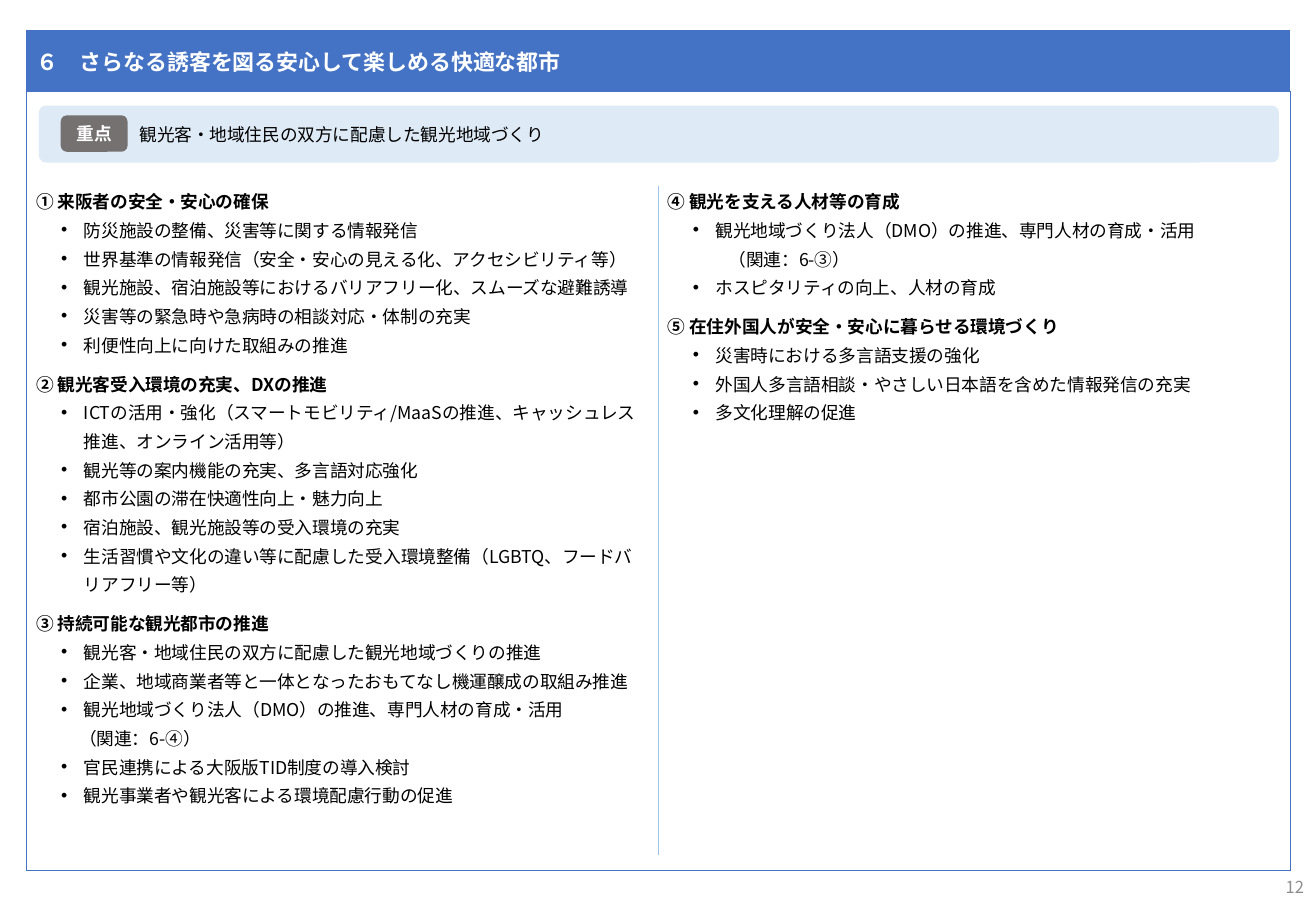
import pptx
import pptx.util
import pptx.dml.color
import pptx.enum.shapes
import pptx.enum.text
import pptx.oxml.ns
import lxml.etree

Pt = pptx.util.Pt
qn = pptx.oxml.ns.qn
SHAPES = pptx.enum.shapes.MSO_SHAPE
ALIGN = pptx.enum.text.PP_ALIGN
MIDDLE = pptx.enum.text.MSO_ANCHOR.MIDDLE
FONT = "Noto Sans CJK JP"
BLUE = "4472C4"


def color(value):
    return pptx.dml.color.RGBColor.from_string(value)


def write(frame, text, size=10.5, ink="000000", bold=False, align=ALIGN.LEFT,
          spacing=None, after=0, left=0, hanging=0):
    paragraph = frame.paragraphs[0]
    if paragraph.runs:
        paragraph = frame.add_paragraph()
    paragraph.alignment = align
    paragraph.space_after = Pt(after)
    if spacing:
        paragraph.line_spacing = Pt(spacing)
    properties = paragraph._p.get_or_add_pPr()
    properties.set("marL", str(Pt(left)))
    properties.set("indent", str(Pt(-hanging)))
    if hanging:
        lxml.etree.SubElement(properties, qn("a:buFont")).set("typeface", "Arial")
        lxml.etree.SubElement(properties, qn("a:buChar")).set("char", "•")
    run = paragraph.add_run()
    run.text = text
    run.font.size = Pt(size)
    run.font.bold = bold
    run.font.color.rgb = color(ink)
    run.font.name = FONT
    lxml.etree.SubElement(run._r.get_or_add_rPr(), qn("a:ea")).set("typeface", FONT)


left_sections = [
    ("① 来阪者の安全・安心の確保", [
        "防災施設の整備、災害等に関する情報発信",
        "世界基準の情報発信（安全・安心の見える化、アクセシビリティ等）",
        "観光施設、宿泊施設等におけるバリアフリー化、スムーズな避難誘導",
        "災害等の緊急時や急病時の相談対応・体制の充実",
        "利便性向上に向けた取組みの推進",
    ]),
    ("② 観光客受入環境の充実、DXの推進", [
        "ICTの活用・強化（スマートモビリティ/MaaSの推進、キャッシュレス推進、オンライン活用等）",
        "観光等の案内機能の充実、多言語対応強化",
        "都市公園の滞在快適性向上・魅力向上",
        "宿泊施設、観光施設等の受入環境の充実",
        "生活習慣や⽂化の違い等に配慮した受⼊環境整備（LGBTQ、フードバリアフリー等）",
    ]),
    ("③ 持続可能な観光都市の推進", [
        "観光客・地域住民の双方に配慮した観光地域づくりの推進",
        "企業、地域商業者等と一体となったおもてなし機運醸成の取組み推進",
        "観光地域づくり法人（DMO）の推進、専門人材の育成・活用",
        "（関連：6-④）",
        "官民連携による大阪版TID制度の導入検討",
        "観光事業者や観光客による環境配慮行動の促進",
    ]),
]
right_sections = [
    ("④ 観光を支える人材等の育成", [
        "観光地域づくり法⼈（DMO）の推進、専⾨⼈材の育成・活用",
        "（関連：6-③）",
        "ホスピタリティの向上、人材の育成",
    ]),
    ("⑤ 在住外国⼈が安全・安⼼に暮らせる環境づくり", [
        "災害時における多⾔語⽀援の強化",
        "外国⼈多⾔語相談・やさしい⽇本語を含めた情報発信の充実",
        "多文化理解の促進",
    ]),
]

presentation = pptx.Presentation()
presentation.slide_width = Pt(780)
presentation.slide_height = Pt(540)
slide = presentation.slides.add_slide(presentation.slide_layouts[6])

table = slide.shapes.add_table(2, 2, Pt(15.84), Pt(18), Pt(748.8), Pt(498.2)).table
table.first_row = False
table.horz_banding = False
table.rows[0].height = Pt(36)
table.rows[1].height = Pt(462.2)
table.cell(0, 0).merge(table.cell(0, 1))

cell_borders = [(0, 0, "LT"), (0, 1, "RT"), (1, 0, "LTB"), (1, 1, "RTB")]
for row, column, sides in cell_borders:
    cell = table.cell(row, column)
    cell.margin_left = cell.margin_right = Pt(5.6)
    cell.margin_top = cell.margin_bottom = Pt(2.8)
    for side in "LRTB":
        border = lxml.etree.SubElement(cell._tc.get_or_add_tcPr(), qn("a:ln" + side))
        border.set("w", str(Pt(0.5)))
        if side in sides:
            fill = lxml.etree.SubElement(border, qn("a:solidFill"))
            lxml.etree.SubElement(fill, qn("a:srgbClr")).set("val", BLUE)
        else:
            lxml.etree.SubElement(border, qn("a:noFill"))
    if row == 0:
        cell.fill.solid()
        cell.fill.fore_color.rgb = color(BLUE)
    else:
        cell.fill.background()

heading_cell = table.cell(0, 0)
heading_cell.vertical_anchor = MIDDLE
write(heading_cell.text_frame, "６　さらなる誘客を図る安心して楽しめる快適な都市",
      size=13, ink="FFFFFF", bold=True)

for column, sections, note_indent in [(0, left_sections, 25.5), (1, right_sections, 36)]:
    cell = table.cell(1, column)
    cell.margin_top = Pt(58.8)
    for number, (heading, items) in enumerate(sections):
        write(cell.text_frame, heading, bold=True, spacing=17 if number else 14)
        for item in items:
            is_last = item == items[-1] and number < len(sections) - 1
            is_note = item.startswith("（関連")
            write(cell.text_frame, item, spacing=17, after=6 if is_last else 0,
                  left=note_indent if is_note else 28.35,
                  hanging=0 if is_note else 13.5)

divider = slide.shapes.add_connector(pptx.enum.shapes.MSO_CONNECTOR.STRAIGHT,
                                     Pt(390.2), Pt(110.2), Pt(390.2), Pt(506.9))
divider.line.color.rgb = color("9DC3E6")
divider.line.width = Pt(0.5)
lxml.etree.SubElement(divider._element.spPr, qn("a:effectLst"))

panels = [
    ((23, 62.6, 735.1, 33.8), "DEEBF7", 0.126, None),
    ((36, 68.4, 39.6, 21.6), "767171", 0.167, "重点"),
]
for bounds, fill_color, rounding, label in panels:
    panel = slide.shapes.add_shape(SHAPES.ROUNDED_RECTANGLE, *map(Pt, bounds))
    panel.adjustments[0] = rounding
    panel.shadow.inherit = False
    panel.fill.solid()
    panel.fill.fore_color.rgb = color(fill_color)
    panel.line.fill.background()
    if label:
        panel.text_frame.vertical_anchor = MIDDLE
        panel.text_frame.margin_left = panel.text_frame.margin_right = 0
        write(panel.text_frame, label, ink="FFFFFF", bold=True, align=ALIGN.CENTER)

text_boxes = [
    ((75.6, 64.8, 391, 29.5), "観光客・地域住民の双方に配慮した観光地域づくり", {}),
    ((604.6, 511.2, 175.4, 28.8), "12", {"size": 9.8, "ink": "8C8C8C", "align": ALIGN.RIGHT}),
]
for bounds, text, style in text_boxes:
    frame = slide.shapes.add_textbox(*map(Pt, bounds)).text_frame
    frame.word_wrap = True
    frame.vertical_anchor = MIDDLE
    write(frame, text, **style)

presentation.save("out.pptx")
